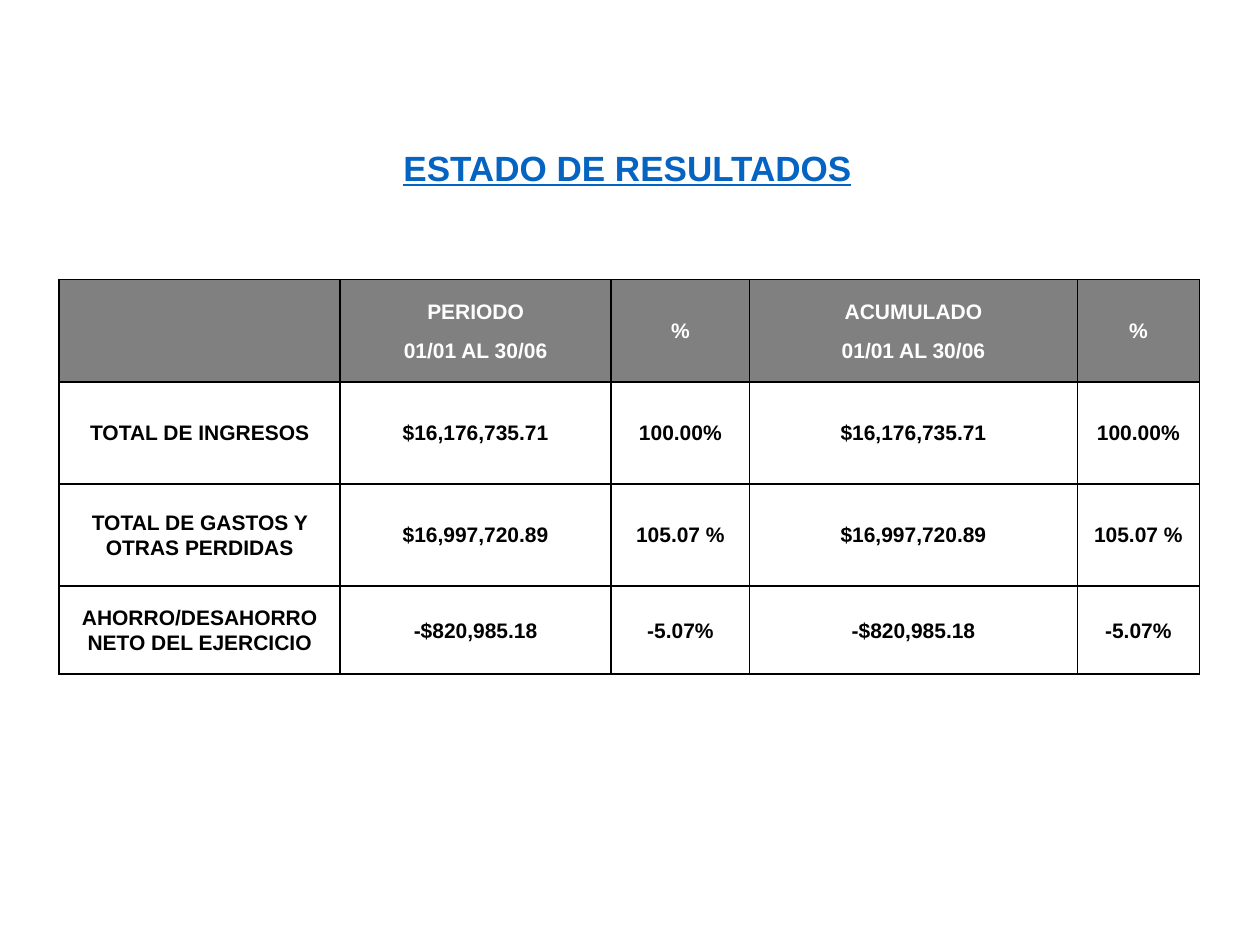
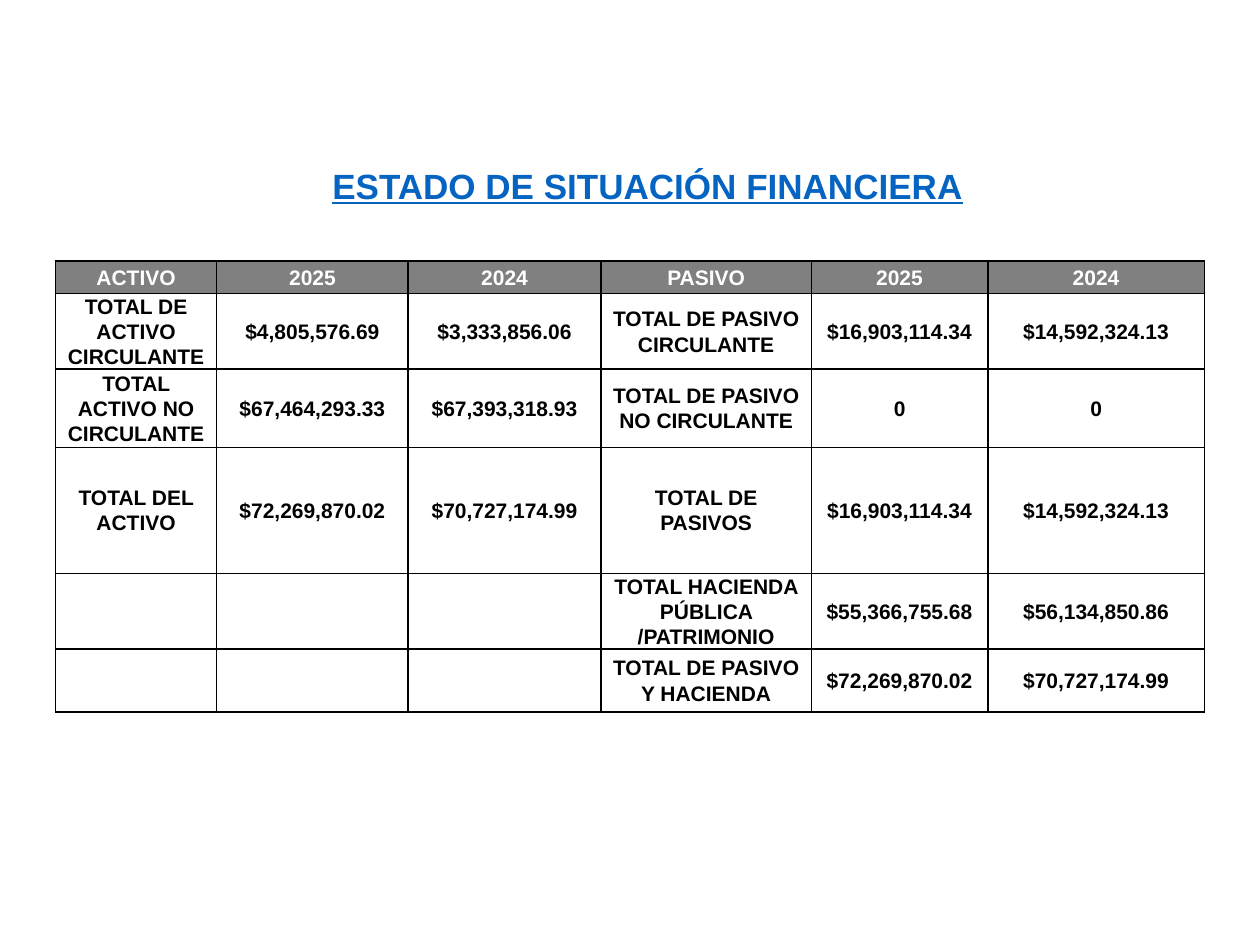
from dataclasses import dataclass

from lxml import etree
from pptx import Presentation
from pptx import util as u
from pptx.dml.color import RGBColor
from pptx.enum import text
from pptx.oxml.ns import qn

TITLE_ONLY = 5


@dataclass(frozen=True)
class Theme:
    font: str = "Arial"
    title_size: int = 20
    cell_size: int = 12
    border_width: int = 1
    title: str = "0563C1"
    header_fill: str = "808080"
    header_text: str = "FFFFFF"
    body_text: str = "000000"
    border: str = "000000"


THEME = Theme()

RESULTS = [
    ["", "PERIODO\n01/01 AL 30/06", "%", "ACUMULADO\n01/01 AL 30/06", "%"],
    ["TOTAL DE INGRESOS", "$16,176,735.71", "100.00%", "$16,176,735.71", "100.00%"],
    ["TOTAL DE GASTOS Y OTRAS PERDIDAS", "$16,997,720.89", "105.07 %",
     "$16,997,720.89", "105.07 %"],
    ["AHORRO/DESAHORRO NETO DEL EJERCICIO", "-$820,985.18", "-5.07%",
     "-$820,985.18", "-5.07%"],
]

POSITION = [
    ["ACTIVO", "2025", "2024", "PASIVO", "2025", "2024"],
    ["TOTAL DE ACTIVO CIRCULANTE", "$4,805,576.69", "$3,333,856.06",
     "TOTAL DE PASIVO CIRCULANTE", "$16,903,114.34", "$14,592,324.13"],
    ["TOTAL ACTIVO NO CIRCULANTE", "$67,464,293.33", "$67,393,318.93",
     "TOTAL DE PASIVO NO CIRCULANTE", "0", "0"],
    ["TOTAL DEL ACTIVO", "$72,269,870.02", "$70,727,174.99",
     "TOTAL DE PASIVOS", "$16,903,114.34", "$14,592,324.13"],
    ["", "", "", "TOTAL HACIENDA PÚBLICA /PATRIMONIO",
     "$55,366,755.68", "$56,134,850.86"],
    ["", "", "", "TOTAL DE PASIVO Y HACIENDA", "$72,269,870.02", "$70,727,174.99"],
]


def add_span(para, words, size, color):
    span = para.add_run()
    span.text = words
    span.font.name = THEME.font
    span.font.size = u.Pt(size)
    span.font.bold = True
    span.font.color.rgb = RGBColor.from_string(color)
    return span


def place_title(page, words, box, anchor):
    title = page.shapes.title
    title.left, title.top, title.width, title.height = map(u.Inches, box)
    frame = title.text_frame
    frame.word_wrap = True
    frame.auto_size = text.MSO_AUTO_SIZE.NONE
    frame.vertical_anchor = anchor
    frame.margin_left = frame.margin_right = u.Inches(0.07)
    frame.margin_top = frame.margin_bottom = u.Inches(0.04)
    para = frame.paragraphs[0]
    para.alignment = text.PP_ALIGN.CENTER
    para.line_spacing = 0.9
    add_span(para, words, THEME.title_size, THEME.title).font.underline = True


def outline_cell(cell):
    properties = cell._tc.get_or_add_tcPr()
    for index, side in enumerate(("lnL", "lnR", "lnT", "lnB")):
        line = etree.Element(qn(f"a:{side}"), w=str(u.Pt(THEME.border_width)))
        fill = etree.SubElement(line, qn("a:solidFill"))
        etree.SubElement(fill, qn("a:srgbClr"), val=THEME.border)
        properties.insert(index, line)


def format_cell(cell, words, is_header):
    cell.vertical_anchor = text.MSO_ANCHOR.MIDDLE
    cell.margin_left = cell.margin_right = u.Inches(0.06)
    cell.margin_top = cell.margin_bottom = 0
    if is_header:
        cell.fill.solid()
        cell.fill.fore_color.rgb = RGBColor.from_string(THEME.header_fill)
    else:
        cell.fill.background()
    outline_cell(cell)
    if not words:
        return
    color = THEME.header_text if is_header else THEME.body_text
    frame = cell.text_frame
    for index, line in enumerate(words.split("\n")):
        para = frame.add_paragraph() if index else frame.paragraphs[0]
        para.alignment = text.PP_ALIGN.CENTER
        para.line_spacing = 1.07
        para.space_after = u.Pt(8)
        add_span(para, line, THEME.cell_size, color)


def place_table(page, rows, corner, widths, heights):
    box = [*corner, sum(widths), sum(heights)]
    table = page.shapes.add_table(len(rows), len(widths), *map(u.Inches, box)).table
    table.horz_banding = False
    for column, width in zip(table.columns, widths):
        column.width = u.Inches(width)
    for row_index, (row, height) in enumerate(zip(rows, heights)):
        table.rows[row_index].height = u.Inches(height)
        for column_index, words in enumerate(row):
            format_cell(table.cell(row_index, column_index), words, row_index == 0)


def add_statement(deck, title, title_box, anchor, rows, corner, widths, heights):
    page = deck.slides.add_slide(deck.slide_layouts[TITLE_ONLY])
    place_title(page, title, title_box, anchor)
    place_table(page, rows, corner, widths, heights)


def main():
    deck = Presentation()
    deck.slide_width, deck.slide_height = u.Inches(10), u.Inches(7.5)
    add_statement(
        deck, "ESTADO DE RESULTADOS", (3.08, 1.13, 3.8, 0.44), text.MSO_ANCHOR.MIDDLE,
        RESULTS, (0.47, 2.22),
        widths=(2.23, 2.15, 1.1, 2.6, 0.97), heights=(0.81, 0.81, 0.81, 0.7))
    add_statement(
        deck, "ESTADO DE SITUACIÓN FINANCIERA", (2.51, 0.95, 5.26, 0.73),
        text.MSO_ANCHOR.BOTTOM, POSITION, (0.44, 2.07),
        widths=(1.28, 1.52, 1.53, 1.67, 1.4, 1.72),
        heights=(0.26, 0.6, 0.62, 1, 0.6, 0.5))
    deck.save("out.pptx")


if __name__ == "__main__":
    main()
